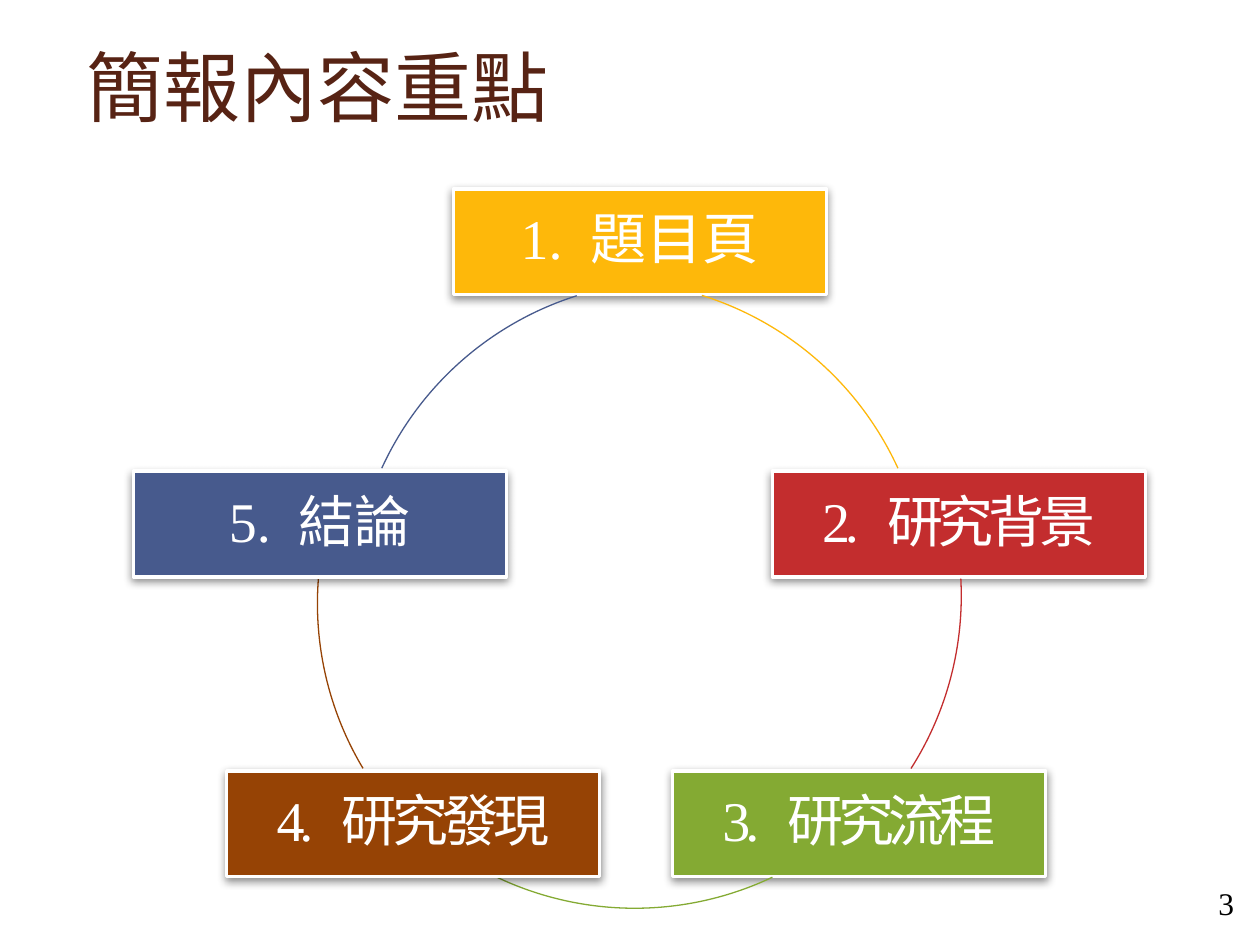
"""Build a slide with five report sections placed around a ring."""
from lxml.etree import SubElement
from pptx import Presentation
from pptx.dml.color import RGBColor
from pptx.enum.shapes import MSO_SHAPE as Kind
from pptx.enum.text import MSO_ANCHOR as Anchor, PP_ALIGN as Align
from pptx.oxml import parse_xml
from pptx.oxml.ns import nsdecls, qn
from pptx.util import Cm, Pt

WHITE = RGBColor(0xFF, 0xFF, 0xFF)
BLACK = RGBColor(0, 0, 0)
BROWN = RGBColor(0x57, 0x23, 0x14)
GOLD = RGBColor(0xFE, 0xB8, 0x0A)
RED = RGBColor(0xC3, 0x2D, 0x2E)
GREEN = RGBColor(0x84, 0xAA, 0x33)
RUST = RGBColor(0x96, 0x43, 0x05)
BLUE = RGBColor(0x47, 0x5A, 0x8D)
LATIN, ASIAN = "Times New Roman", "Noto Sans CJK SC"
SHADOW = (
    f'<a:effectLst {nsdecls("a")}><a:outerShdw blurRad="63500" dist="25400" '
    'dir="5400000" rotWithShape="0"><a:srgbClr val="000000">'
    '<a:alpha val="43000"/></a:srgbClr></a:outerShdw></a:effectLst>'
)


def add_text(para, text, size=32, color=WHITE, font=LATIN, gap=0):
    run = para.add_run()
    run.text = text
    run.font.size = Pt(size)
    run.font.color.rgb = color
    run.font.name = font
    props = run.font._element
    SubElement(props, qn("a:ea")).set("typeface", ASIAN)
    if gap:
        props.set("spc", str(gap * 100))


deck = Presentation()
deck.slide_width, deck.slide_height = Cm(25.4), Cm(19.05)
slide = deck.slides.add_slide(deck.slide_layouts[6])
shapes = slide.shapes

title = shapes.add_textbox(Cm(1.5), Cm(0.13), Cm(20.83), Cm(3.18)).text_frame
title.word_wrap = True
title.vertical_anchor = Anchor.MIDDLE
add_text(title.paragraphs[0], "簡報內容重點", size=44, color=BROWN, font=ASIAN)

parts = [
    ("題目頁", GOLD, 0, (9.14, 3.81), (5.74, 5.66), (287.4, 335.4)),
    ("研究背景", RED, -3, (15.57, 9.5), (6.43, 5.54), (356.9, 32.5)),
    ("研究流程", GREEN, -3, (13.56, 15.54), (6.32, 5.36), (64.6, 115.4)),
    ("研究發現", RUST, -3, (4.57, 15.54), (6.4, 5.69), (149.1, 184.5)),
    ("結論", BLUE, 0, (2.69, 9.5), (7.11, 5.66), (204.6, 252.4)),
]
for num, (label, color, gap, spot, ring, sweep) in enumerate(parts, 1):
    box = shapes.add_shape(Kind.RECTANGLE, *map(Cm, spot), Cm(7.52), Cm(2.13))
    box.fill.solid()
    box.fill.fore_color.rgb = color
    box.line.color.rgb = WHITE
    box.line.width = Pt(2)
    box._element.spPr.append(parse_xml(SHADOW))
    frame = box.text_frame
    frame.word_wrap = True
    frame.vertical_anchor = Anchor.MIDDLE
    frame.margin_left = frame.margin_right = Cm(0.33)
    frame.margin_top = frame.margin_bottom = Cm(0.33)
    para = frame.paragraphs[0]
    para.alignment = Align.CENTER
    para.line_spacing = 0.9
    add_text(para, f"{num}.", gap=gap)
    add_text(para, " ", gap=8)
    add_text(para, label, gap=gap)

    arc = shapes.add_shape(Kind.ARC, *map(Cm, ring), Cm(12.95), Cm(12.95))
    arc.shadow.inherit = False
    arc.fill.background()
    arc.line.color.rgb = color
    arc.line.width = Pt(0.75)
    for i, angle in enumerate(sweep):
        arc.adjustments[i] = angle * 0.6

page = shapes.add_textbox(Cm(24.31), Cm(17.7), Cm(1.09), Cm(1.02)).text_frame
page.word_wrap = True
add_text(page.paragraphs[0], "3", size=18, color=BLACK)

deck.save("out.pptx")
